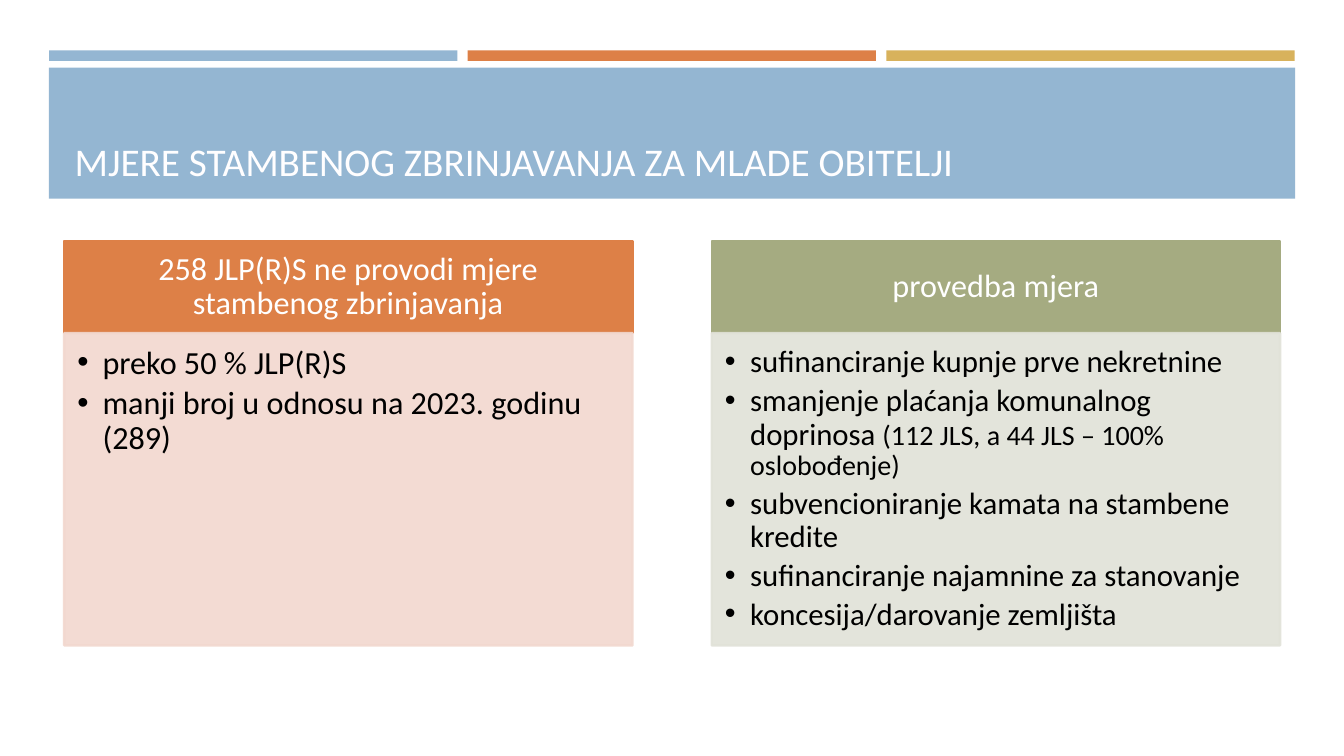
from lxml.etree import SubElement
from pptx import Presentation
from pptx.dml.color import RGBColor
from pptx.enum.shapes import MSO_SHAPE as Shape
from pptx.enum.text import MSO_ANCHOR as Anchor, MSO_AUTO_SIZE as AutoSize, PP_ALIGN as Align
from pptx.oxml.ns import qn
from pptx.util import Pt

BLUE = RGBColor(0x94, 0xB6, 0xD2)
ORANGE = RGBColor(0xDD, 0x80, 0x47)
GOLD = RGBColor(0xD8, 0xB2, 0x5C)
GREEN = RGBColor(0xA5, 0xAB, 0x81)
PALE_ORANGE = RGBColor(0xF2, 0xD8, 0xCF)
PALE_GREEN = RGBColor(0xE1, 0xE2, 0xD8)
WHITE = RGBColor(0xFF, 0xFF, 0xFF)
TITLE_WHITE = RGBColor(0xFF, 0xFE, 0xFF)
BLACK = RGBColor(0, 0, 0)

TITLE = "MJERE STAMBENOG ZBRINJAVANJA ZA MLADE OBITELJI"
COLUMNS = [
    ("258 JLP(R)S ne provodi mjere stambenog zbrinjavanja", ORANGE, PALE_ORANGE, [
        [("preko 50 % JLP(R)S", 23)],
        [("manji broj u odnosu na 2023. godinu (289)", 23)],
    ]),
    ("provedba mjera", GREEN, PALE_GREEN, [
        [("sufinanciranje kupnje prve nekretnine", 22)],
        [("smanjenje plaćanja komunalnog doprinosa ", 22),
         ("(112 JLS, a 44 JLS – 100% oslobođenje)", 20)],
        [("subvencioniranje kamata na stambene kredite", 22)],
        [("sufinanciranje najamnine za stanovanje", 22)],
        [("koncesija/darovanje zemljišta", 22)],
    ]),
]


def apply(target, **values):
    for name, value in values.items():
        setattr(target, name, value)


class Deck:
    font = "Calibri"

    def __init__(self, width, height):
        self.presentation = Presentation()
        apply(self.presentation, slide_width=Pt(width), slide_height=Pt(height))
        self.slide = self.presentation.slides.add_slide(self.presentation.slide_layouts[5])

    def block(self, box, color, outline=False, opacity=None):
        block = self.slide.shapes.add_shape(Shape.RECTANGLE, *map(Pt, box))
        block.shadow.inherit = False
        block.fill.solid()
        block.fill.fore_color.rgb = color
        if outline:
            block.line.color.rgb = color
            block.line.width = Pt(1.75)
        else:
            block.line.fill.background()
        if opacity:
            for tint in block.element.spPr.iter(qn("a:srgbClr")):
                SubElement(tint, qn("a:alpha"), val=str(opacity * 1000))
        return block

    def frame(self, shape, anchor, insets):
        left, top, right, bottom = map(Pt, insets)
        apply(shape.text_frame, word_wrap=True, auto_size=AutoSize.NONE,
              vertical_anchor=anchor, margin_left=left, margin_top=top,
              margin_right=right, margin_bottom=bottom)
        return shape.text_frame

    def fill_text(self, paragraph, runs, color, **layout):
        apply(paragraph, **layout)
        for text, size in runs:
            run = paragraph.add_run()
            run.text = text
            apply(run.font, name=self.font, size=Pt(size), bold=False)
            run.font.color.rgb = color

    def title(self, box, text):
        title = self.slide.shapes.title
        apply(title, **dict(zip(("left", "top", "width", "height"), map(Pt, box))))
        frame = self.frame(title, Anchor.BOTTOM, (7.2, 3.6, 7.2, 3.6))
        self.fill_text(frame.paragraphs[0], [(text, 28)], TITLE_WHITE, alignment=Align.LEFT)
        title.element.getparent().append(title.element)

    def heading(self, box, text, color):
        frame = self.frame(self.block(box, color, True), Anchor.MIDDLE, (13, 7.2, 13, 7.2))
        self.fill_text(frame.paragraphs[0], [(text, 23)], WHITE,
                       alignment=Align.CENTER, line_spacing=0.9)

    def bullets(self, box, items, color):
        frame = self.frame(self.block(box, color, True, 90), Anchor.TOP, (9.4, 9.4, 12.5, 14))
        for index, runs in enumerate(items):
            paragraph = frame.add_paragraph() if index else frame.paragraphs[0]
            self.fill_text(paragraph, runs, BLACK, alignment=Align.LEFT,
                           line_spacing=0.9, space_after=Pt(4))
            properties = paragraph._p.get_or_add_pPr()
            properties.set("marL", str(Pt(18)))
            properties.set("indent", str(Pt(-18)))
            SubElement(properties, qn("a:buFont"), typeface="Arial")
            SubElement(properties, qn("a:buChar"), char="•")


def main():
    deck = Deck(960, 540)
    for index, color in enumerate((BLUE, ORANGE, GOLD)):
        deck.block((35.1 + index * 299, 36, 291.6, 7.5), color)
    deck.block((34.9, 48.4, 890.3, 93.6), BLUE)
    deck.title((46.1, 55.4, 868, 80), TITLE)
    for index, (heading, color, pale, items) in enumerate(COLUMNS):
        left = 45.8 + index * 462.6
        deck.heading((left, 172, 406, 66), heading, color)
        deck.bullets((left, 238, 406, 223), items, pale)
    deck.presentation.save("out.pptx")


if __name__ == "__main__":
    main()
